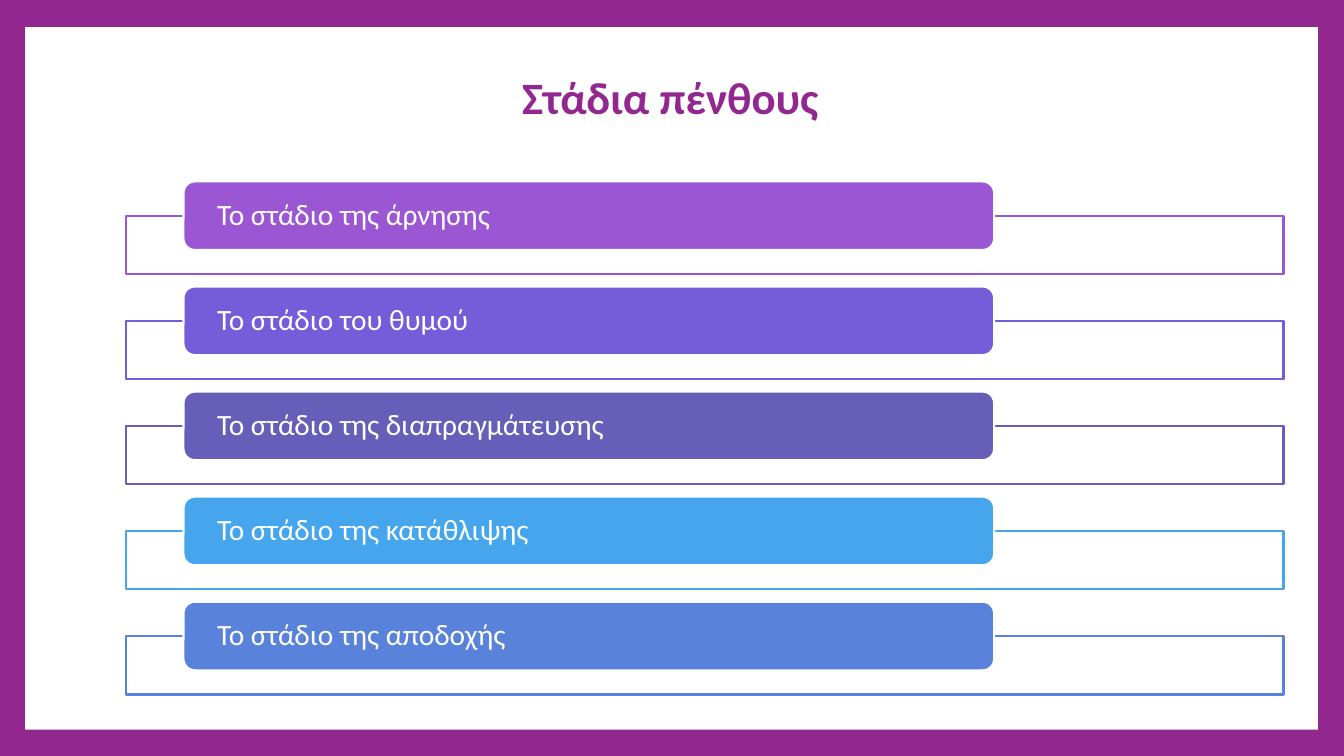
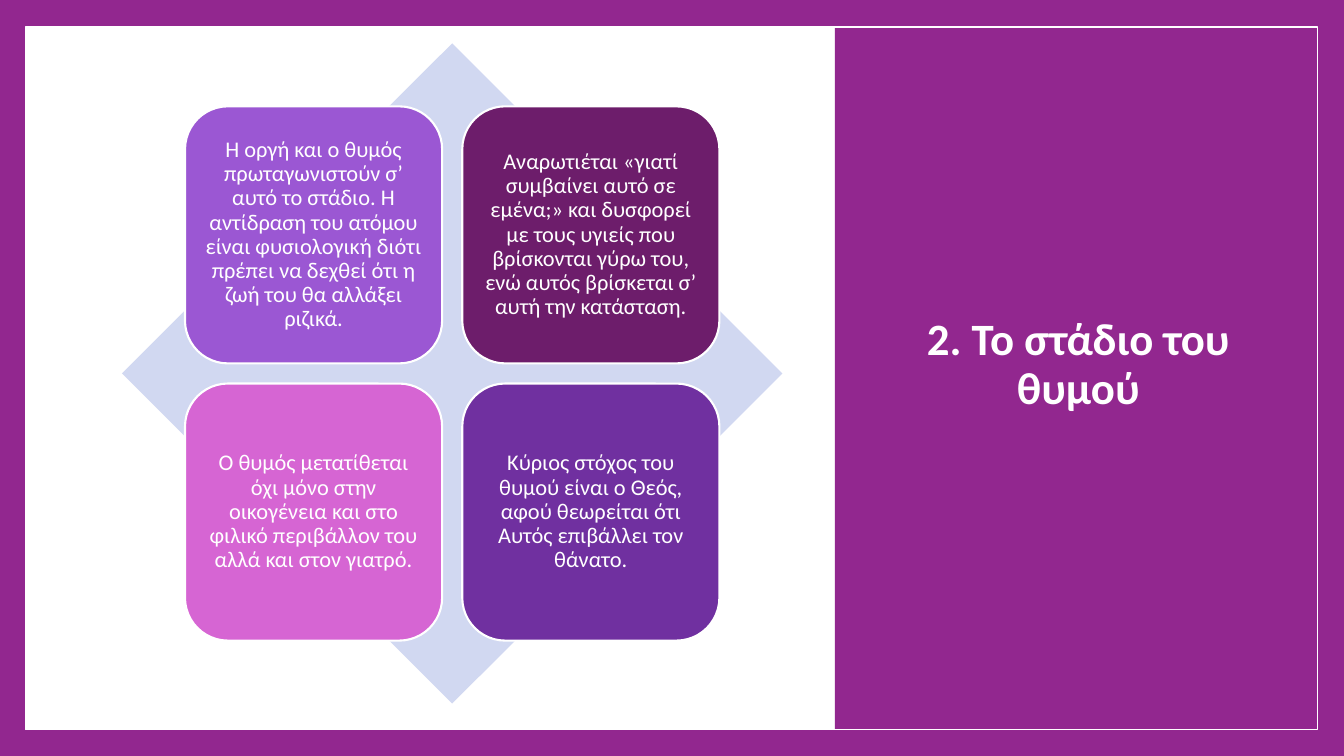
from pptx import Presentation
from pptx.dml.color import RGBColor
from pptx.enum.shapes import MSO_SHAPE
from pptx.enum.text import MSO_ANCHOR, MSO_AUTO_SIZE, PP_ALIGN
from pptx.util import Inches, Pt

FONT = "Calibri"
WHITE = RGBColor(0xFF, 0xFF, 0xFF)
PURPLE = RGBColor(0x92, 0x27, 0x8F)
VIOLET = RGBColor(0x9B, 0x57, 0xD3)
INDIGO = RGBColor(0x75, 0x5D, 0xD9)
SLATE = RGBColor(0x66, 0x5E, 0xB8)
SKY = RGBColor(0x45, 0xA5, 0xED)
BLUE = RGBColor(0x59, 0x82, 0xDB)
PLUM = RGBColor(0x6D, 0x1D, 0x6B)
PINK = RGBColor(0xD6, 0x65, 0xD3)
GRAPE = RGBColor(0x70, 0x30, 0xA0)
PALE = RGBColor(0xD1, 0xD8, 0xF1)

SLIDE_WIDTH, SLIDE_HEIGHT = 13.33, 7.5
FRAME = (0.25, 0.27, 12.82, 6.97)

STAGES_TITLE = "Στάδια πένθους"
STAGES = [
    ("Το στάδιο της άρνησης", VIOLET),
    ("Το στάδιο του θυμού", INDIGO),
    ("Το στάδιο της διαπραγμάτευσης", SLATE),
    ("Το στάδιο της κατάθλιψης", SKY),
    ("Το στάδιο της αποδοχής", BLUE),
]

ANGER_TITLE = "2. Το στάδιο του θυμού"
ANGER_CARDS = [
    ("Η οργή και ο θυμός πρωταγωνιστούν σ’ αυτό το στάδιο. Η αντίδραση του "
     "ατόμου είναι φυσιολογική διότι πρέπει να δεχθεί ότι η ζωή του θα "
     "αλλάξει ριζικά.", VIOLET),
    ("Αναρωτιέται «γιατί συμβαίνει αυτό σε εμένα;» και δυσφορεί με τους "
     "υγιείς που βρίσκονται γύρω του, ενώ αυτός βρίσκεται σ’ αυτή την "
     "κατάσταση.", PLUM),
    ("Ο θυμός μετατίθεται όχι μόνο στην οικογένεια και στο φιλικό περιβάλλον "
     "του αλλά και στον γιατρό.", PINK),
    ("Κύριος στόχος του θυμού είναι ο Θεός, αφού θεωρείται ότι Αυτός "
     "επιβάλλει τον θάνατο.", GRAPE),
]


def add_box(slide, kind, area, fill=None, line=None, line_width=1.5):
    box = slide.shapes.add_shape(kind, *map(Inches, area))
    box.shadow.inherit = False
    if fill is None:
        box.fill.background()
    else:
        box.fill.solid()
        box.fill.fore_color.rgb = fill
    if line is None:
        box.line.fill.background()
    else:
        box.line.color.rgb = line
        box.line.width = Pt(line_width)
    return box


def write(box, text, size, color, align, bold=False):
    frame = box.text_frame
    frame.text = text
    frame.word_wrap = True
    frame.auto_size = MSO_AUTO_SIZE.NONE
    frame.vertical_anchor = MSO_ANCHOR.MIDDLE
    para = frame.paragraphs[0]
    para.alignment = align
    para.line_spacing = 0.9
    para.font.name = FONT
    para.font.size = Pt(size)
    para.font.bold = bold
    para.font.color.rgb = color
    return frame


def add_framed_slide(deck):
    """Add a title-only slide with a white panel inside a purple border."""
    slide = deck.slides.add_slide(deck.slide_layouts[5])
    slide.background.fill.solid()
    slide.background.fill.fore_color.rgb = PURPLE
    add_box(slide, MSO_SHAPE.RECTANGLE, FRAME, WHITE)
    return slide


def place_title(slide, text, area, color):
    """Format the title and bring it in front of the panels."""
    title = slide.shapes.title
    title.left, title.top, title.width, title.height = map(Inches, area)
    write(title, text, 32, color, PP_ALIGN.CENTER, bold=True)
    title.element.getparent().append(title.element)


def build_stages(deck):
    slide = add_framed_slide(deck)
    place_title(slide, STAGES_TITLE, (1.25, 0.48, 10.8, 1.02), PURPLE)
    first_top, pitch, overhang = 1.8, 1.0425, 0.34
    for row, (text, color) in enumerate(STAGES):
        top = first_top + row * pitch
        add_box(slide, MSO_SHAPE.RECTANGLE,
                (1.25, top + overhang, 11.48, 0.58), WHITE, color)
        label = add_box(slide, MSO_SHAPE.ROUNDED_RECTANGLE,
                        (1.82, top, 8.04, 0.68), color, WHITE)
        frame = write(label, text, 21, WHITE, PP_ALIGN.LEFT)
        frame.margin_left = frame.margin_right = Inches(0.3)
        frame.margin_top = frame.margin_bottom = 0


def build_anger(deck):
    slide = add_framed_slide(deck)
    side_left = 8.28
    add_box(slide, MSO_SHAPE.RECTANGLE,
            (side_left, 0, SLIDE_WIDTH - side_left, SLIDE_HEIGHT), PURPLE)
    place_title(slide, ANGER_TITLE, (8.74, 0.67, 3.91, 5.91), WHITE)
    add_box(slide, MSO_SHAPE.RECTANGLE, FRAME, line=WHITE, line_width=1)

    left, top, side = 1.21, 0.43, 6.55
    add_box(slide, MSO_SHAPE.DIAMOND, (left, top, side, side), PALE)
    card, gap = 2.55, 0.2
    inset = (side - 2 * card - gap) / 2
    for index, (text, color) in enumerate(ANGER_CARDS):
        row, column = divmod(index, 2)
        area = (left + inset + column * (card + gap),
                top + inset + row * (card + gap), card, card)
        box = add_box(slide, MSO_SHAPE.ROUNDED_RECTANGLE, area, color, WHITE)
        frame = write(box, text, 16, WHITE, PP_ALIGN.CENTER)
        frame.margin_left = frame.margin_right = Inches(0.07)
        frame.margin_top = frame.margin_bottom = Inches(0.07)


def main():
    deck = Presentation()
    deck.slide_width = Inches(SLIDE_WIDTH)
    deck.slide_height = Inches(SLIDE_HEIGHT)
    build_stages(deck)
    build_anger(deck)
    deck.save("out.pptx")


if __name__ == "__main__":
    main()
